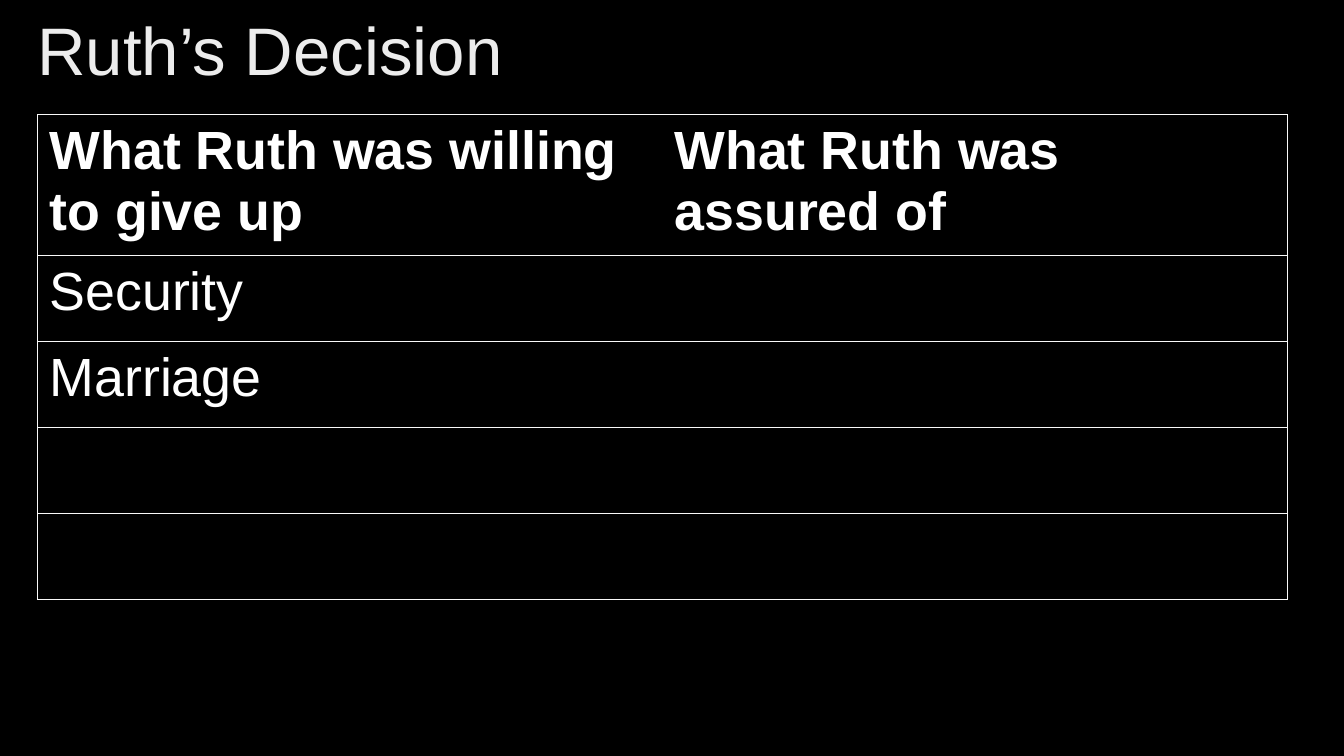
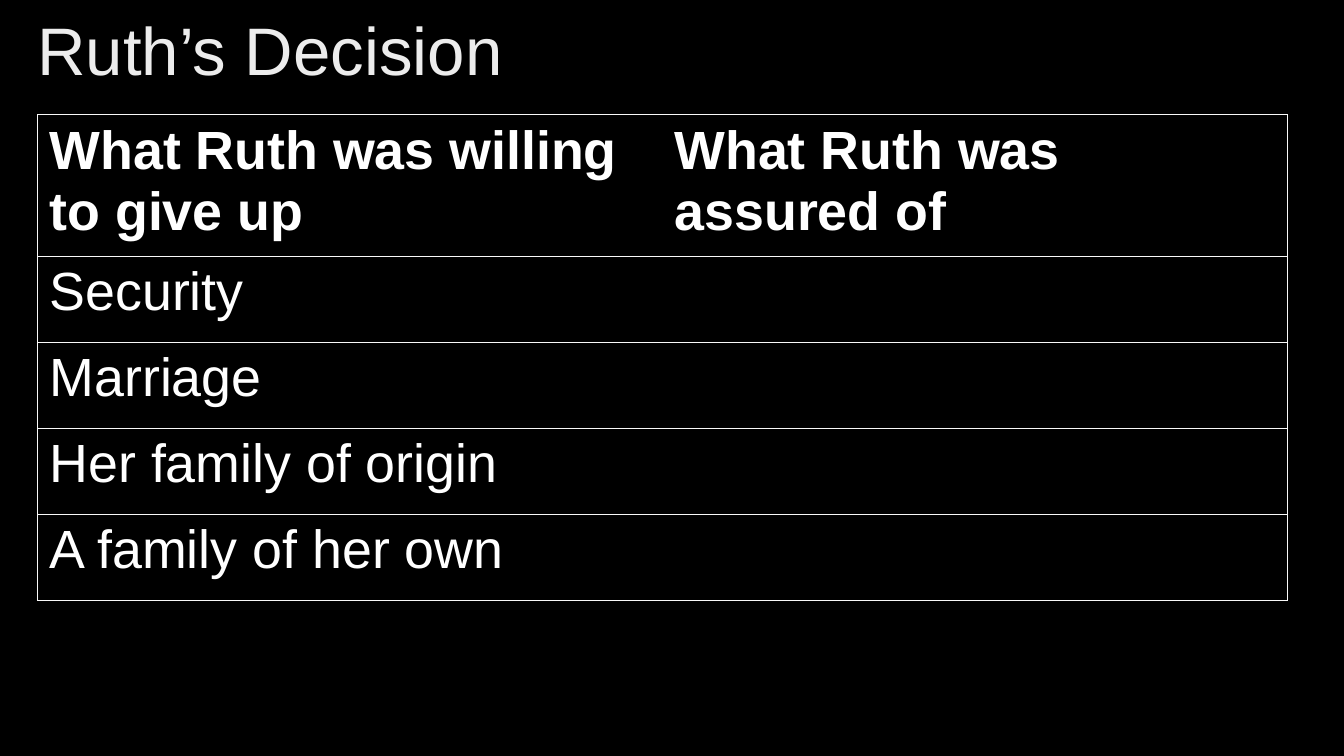
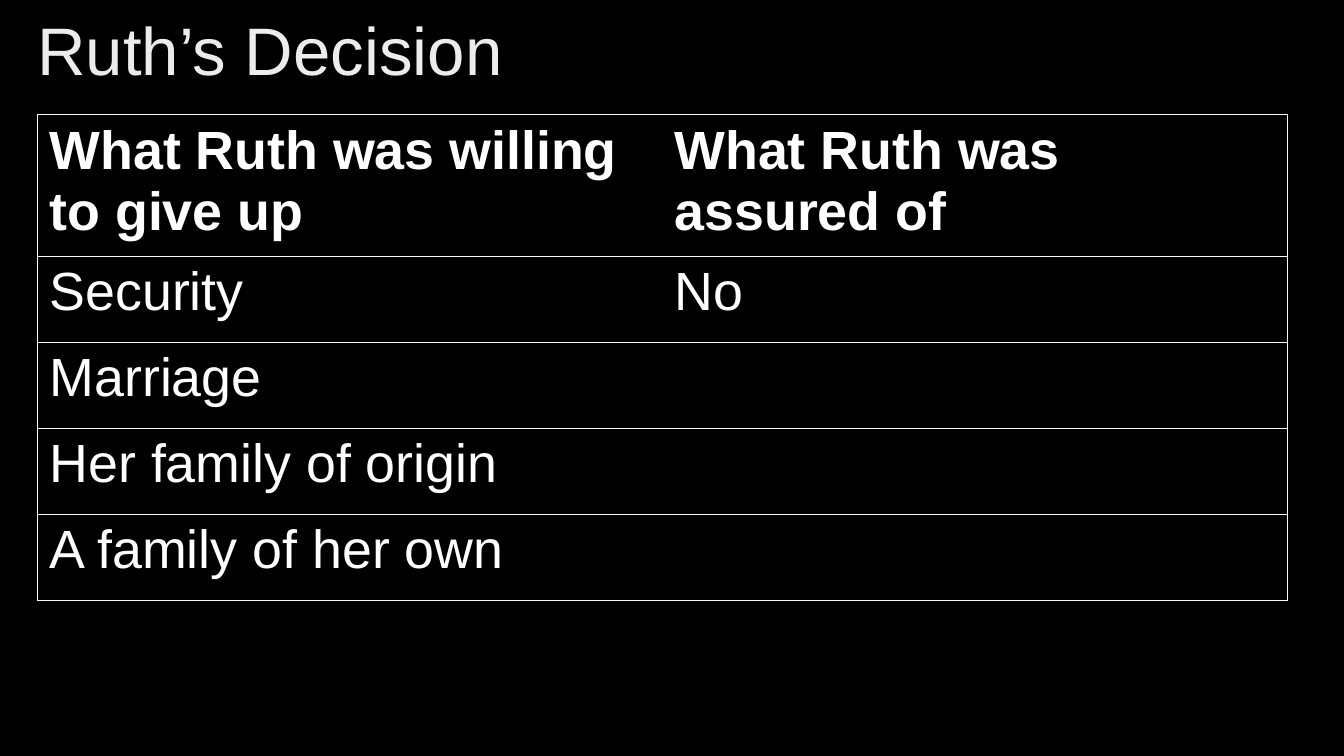
"""Build three slides that fill in a table about Ruth's decision step by step."""
from lxml import etree
from pptx import Presentation
from pptx.dml.color import RGBColor
from pptx.enum import text
from pptx.oxml import ns
from pptx.util import Pt

TITLE = "Ruth’s Decision"
HEADER = ("What Ruth was willing to give up", "What Ruth was assured of")
LOSSES = ("Security", "Marriage", "Her family of origin", "A family of her own")
STEPS = (
    {"losses": 2, "answers": ()},
    {"losses": 4, "answers": ()},
    {"losses": 4, "answers": ("No",)},
)

COLORS = {"background": "000000", "title": "ECECEC", "text": "FFFFFF", "rule": "F9F9F9"}
FONT = "Arial"
SLIDE_SIZE = (800, 450)
TITLE_BOX = (15.1, 1.4, 372, 55.4)
TABLE_LEFT, TABLE_TOP = 22.3, 68.4
COLUMN_WIDTH = 372
HEADER_HEIGHT, ROW_HEIGHT = 83.9, 51.2
RULE_WIDTH = 0.75


def write(frame, content, *, size, color, bold=False):
    """Put one formatted run into a text frame."""
    span = frame.paragraphs[0].add_run()
    span.text = content
    span.font.name = FONT
    span.font.size = Pt(size)
    span.font.bold = bold
    span.font.color.rgb = RGBColor.from_string(COLORS[color])


def add_borders(cell, sides):
    """Rule the named sides of a cell and clear the others."""
    properties = cell._tc.get_or_add_tcPr()
    for side in "LRTB":
        line = etree.SubElement(properties, ns.qn(f"a:ln{side}"), w=str(Pt(RULE_WIDTH)))
        if side in sides:
            fill = etree.SubElement(line, ns.qn("a:solidFill"))
            etree.SubElement(fill, ns.qn("a:srgbClr"), val=COLORS["rule"])
        else:
            etree.SubElement(line, ns.qn("a:noFill"))


def add_title(page):
    """Add the shared slide title."""
    box = page.shapes.add_textbox(*map(Pt, TITLE_BOX))
    box.text_frame.word_wrap = True
    box.text_frame.auto_size = text.MSO_AUTO_SIZE.SHAPE_TO_FIT_TEXT
    write(box.text_frame, TITLE, size=40, color="title")


def add_decision_table(page, losses, answers):
    """Add the table with the given number of losses and the answers so far."""
    rows = [HEADER]
    for index, loss in enumerate(LOSSES):
        rows.append((loss if index < losses else "",
                     answers[index] if index < len(answers) else ""))
    heights = [HEADER_HEIGHT] + [ROW_HEIGHT] * len(LOSSES)
    table = page.shapes.add_table(
        len(rows), len(HEADER), Pt(TABLE_LEFT), Pt(TABLE_TOP),
        Pt(COLUMN_WIDTH * len(HEADER)), Pt(sum(heights))).table
    table.first_row = table.horz_banding = False
    for column in table.columns:
        column.width = Pt(COLUMN_WIDTH)
    for row_index, (values, height) in enumerate(zip(rows, heights)):
        table.rows[row_index].height = Pt(height)
        for column_index, value in enumerate(values):
            cell = table.cell(row_index, column_index)
            add_borders(cell, "TB" + "LR"[column_index])
            cell.fill.solid()
            cell.fill.fore_color.rgb = RGBColor.from_string(COLORS["background"])
            if value:
                write(cell.text_frame, value, size=32, color="text", bold=row_index == 0)


def main():
    """Build and save the deck."""
    deck = Presentation()
    deck.slide_width, deck.slide_height = map(Pt, SLIDE_SIZE)
    for step in STEPS:
        page = deck.slides.add_slide(deck.slide_layouts[6])
        page.background.fill.solid()
        page.background.fill.fore_color.rgb = RGBColor.from_string(COLORS["background"])
        add_decision_table(page, **step)
        add_title(page)
    deck.save("out.pptx")


if __name__ == "__main__":
    main()
